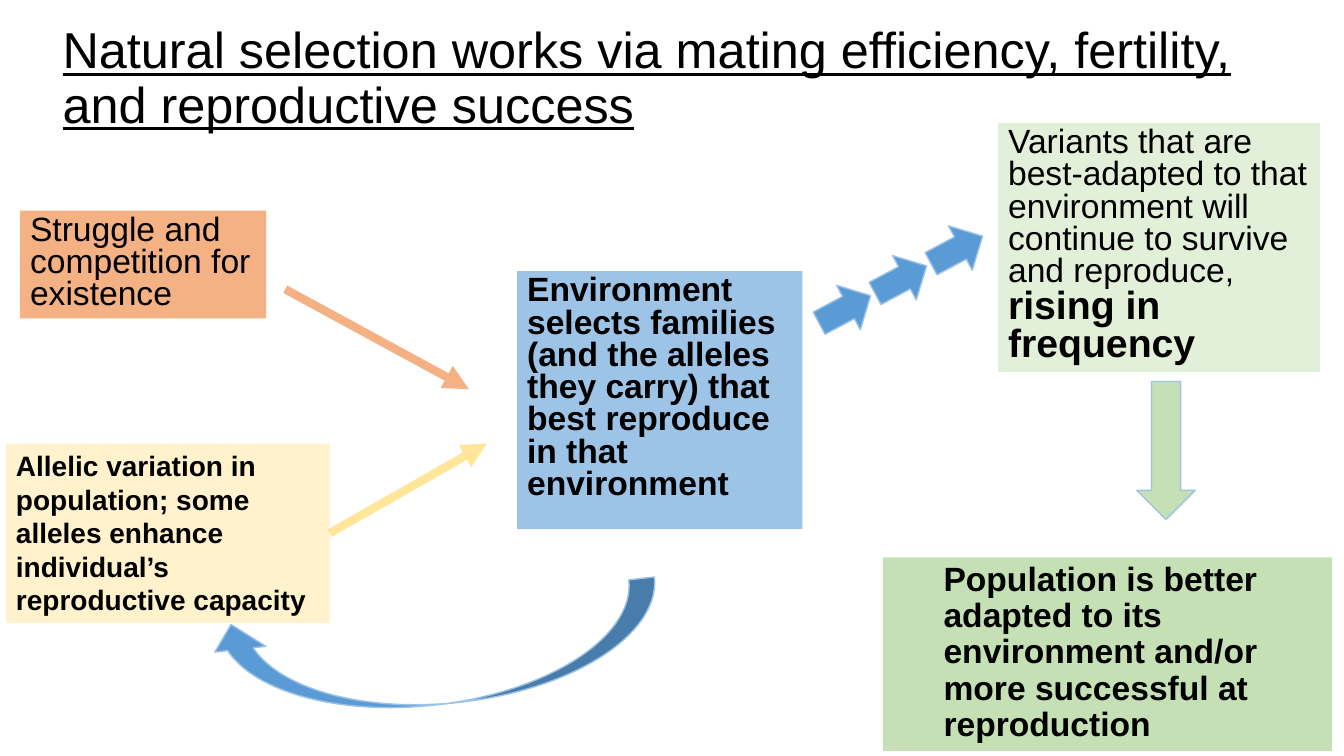
from lxml.etree import SubElement
from pptx import Presentation
from pptx.dml.color import RGBColor
from pptx.enum.shapes import MSO_CONNECTOR, MSO_SHAPE
from pptx.enum.text import MSO_ANCHOR, MSO_AUTO_SIZE, PP_ALIGN
from pptx.oxml.ns import qn
from pptx.util import Inches, Pt

BLACK = RGBColor(0x00, 0x00, 0x00)
BLUE = RGBColor(0x5B, 0x9B, 0xD5)
LIGHT_BLUE = RGBColor(0x9D, 0xC3, 0xE6)
ORANGE = RGBColor(0xF4, 0xB1, 0x83)
CREAM = RGBColor(0xFF, 0xF2, 0xCC)
YELLOW = RGBColor(0xFF, 0xE6, 0x99)
PALE_GREEN = RGBColor(0xE2, 0xF0, 0xD9)
GREEN = RGBColor(0xC5, 0xE0, 0xB4)


def style_font(font, size, bold=False):
    """Set the common black Arial look on a font."""
    font.name = "Arial"
    font.size = Pt(size)
    font.bold = bold
    font.color.rgb = BLACK


def set_title(slide, text):
    """Place and format the underlined slide title."""
    title = slide.shapes.title
    title.left, title.top = Inches(0.52), Inches(0.25)
    title.width, title.height = Inches(11.94), Inches(1.08)
    frame = title.text_frame
    frame.text = text
    frame.auto_size = MSO_AUTO_SIZE.NONE
    frame.vertical_anchor = MSO_ANCHOR.MIDDLE
    paragraph = frame.paragraphs[0]
    paragraph.alignment = PP_ALIGN.LEFT
    paragraph.line_spacing = 0.9
    style_font(paragraph.font, 36)
    paragraph.font.underline = True


def add_box(slide, box, color, text, size=24, bold=True, spacing=0.8, indent=0):
    """Add a filled text box and return its paragraph."""
    shape = slide.shapes.add_textbox(*map(Inches, box))
    shape.fill.solid()
    shape.fill.fore_color.rgb = color
    frame = shape.text_frame
    frame.word_wrap = True
    paragraph = frame.paragraphs[0]
    paragraph.add_run().text = text
    paragraph.line_spacing = spacing
    style_font(paragraph.font, size, bold)
    if indent:
        paragraph._p.get_or_add_pPr().set("marL", str(Inches(indent)))
    return paragraph


def add_block_arrow(slide, kind, box, rotation, color=BLUE):
    """Add a rotated block arrow with a light blue outline."""
    arrow = slide.shapes.add_shape(kind, *map(Inches, box))
    arrow.shadow.inherit = False
    arrow.rotation = rotation
    arrow.fill.solid()
    arrow.fill.fore_color.rgb = color
    arrow.line.color.rgb = LIGHT_BLUE
    arrow.line.width = Pt(1)
    return arrow


def add_line_arrow(slide, start, end, color):
    """Add a thick straight line with a triangle head."""
    points = map(Inches, (*start, *end))
    connector = slide.shapes.add_connector(MSO_CONNECTOR.STRAIGHT, *points)
    connector.line.color.rgb = color
    connector.line.width = Pt(6)
    SubElement(connector.line._get_or_add_ln(), qn("a:tailEnd"), type="triangle")
    SubElement(connector._element.spPr, qn("a:effectLst"))


def main():
    """Build the natural selection slide."""
    presentation = Presentation()
    presentation.slide_width, presentation.slide_height = Inches(13.33), Inches(7.5)
    slide = presentation.slides.add_slide(presentation.slide_layouts.get_by_name("Title Only"))
    set_title(slide, "Natural selection works via mating efficiency, fertility, and reproductive success")

    add_box(slide, (5.13, 2.69, 2.83, 2.56), LIGHT_BLUE,
            "Environment selects families (and the alleles they carry) that best reproduce in that environment")
    add_box(slide, (0.2, 2.09, 2.44, 1.07), ORANGE,
            "Struggle and competition for existence", bold=False)
    add_box(slide, (0.06, 4.4, 3.21, 1.78), CREAM,
            "Allelic variation in population; some alleles enhance individual’s reproductive capacity",
            size=20, spacing=1.0)
    variants = add_box(slide, (9.9, 1.22, 3.19, 2.47), PALE_GREEN,
                       "Variants that are best-adapted to that environment will continue to survive and reproduce, ",
                       bold=False)
    rising = variants.add_run()
    rising.text = "rising in frequency"
    style_font(rising.font, 28, bold=True)

    add_line_arrow(slide, (2.83, 2.87), (4.65, 3.86), ORANGE)
    add_line_arrow(slide, (3.27, 5.29), (4.83, 4.4), YELLOW)
    feedback = add_block_arrow(slide, MSO_SHAPE.CURVED_UP_ARROW, (2.08, 5.97, 4.48, 1.02), 173.6)
    feedback._element.spPr.xfrm.set("flipV", "1")
    for step in range(3):
        box = (8.09 + 0.555 * step, 2.82 - 0.295 * step, 0.58, 0.5)
        add_block_arrow(slide, MSO_SHAPE.RIGHT_ARROW, box, 331.9)

    add_box(slide, (8.76, 5.53, 4.45, 1.92), GREEN,
            "Population is better adapted to its environment and/or more successful at reproduction",
            spacing=0.9, indent=0.5)
    add_block_arrow(slide, MSO_SHAPE.RIGHT_ARROW, (10.88, 4.18, 1.37, 0.58), 90, GREEN)
    presentation.save("out.pptx")


if __name__ == "__main__":
    main()
